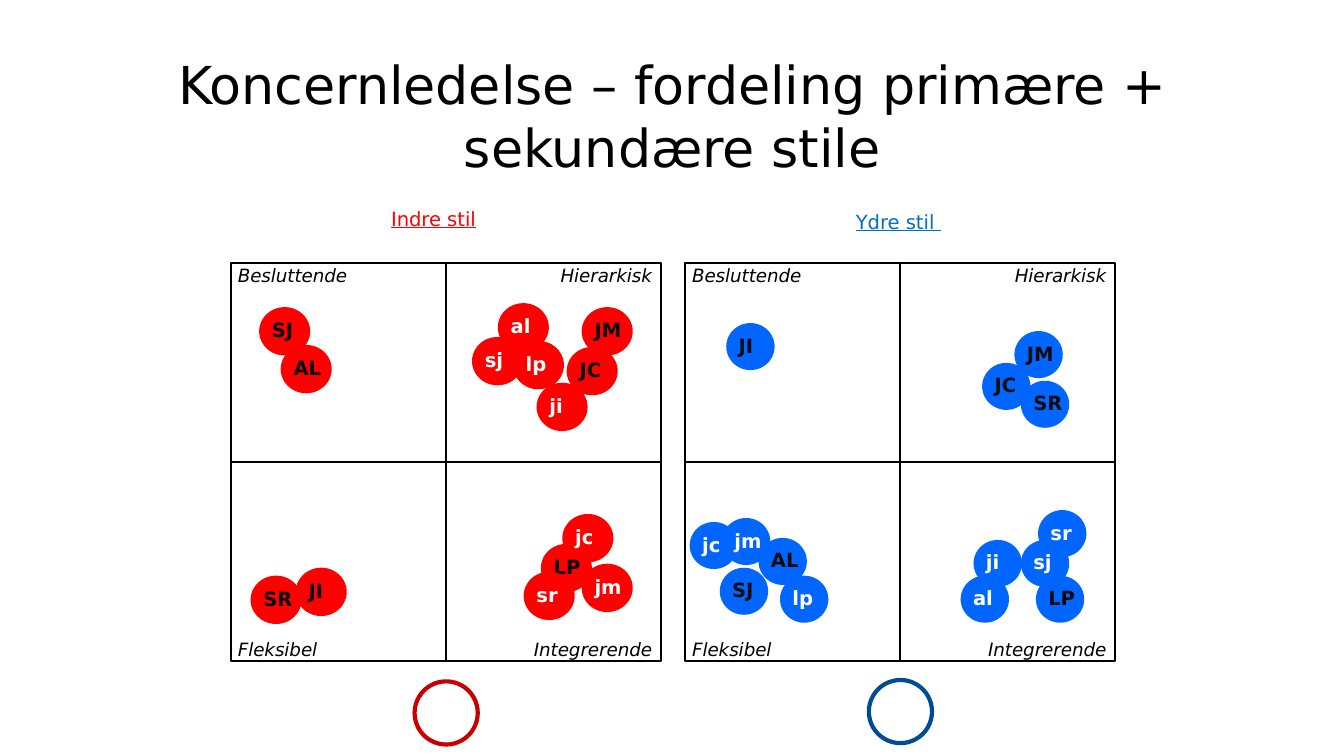
"""Build a slide that places leaders' initials in two style quadrants."""
from dataclasses import dataclass
from itertools import product

from pptx import Presentation
from pptx.dml.color import RGBColor
from pptx.enum.shapes import MSO_SHAPE as Shape
from pptx.enum.text import MSO_ANCHOR as Anchor, MSO_AUTO_SIZE as AutoSize, PP_ALIGN as Align
from pptx.util import Inches, Pt

FONT = "DejaVu Sans"
COLORS = {
    "black": "000000", "white": "FFFFFF", "ink": "080B0E",
    "red": "FF0000", "dark_red": "C80000",
    "blue": "0066FF", "heading_blue": "0070C0", "dark_blue": "004B96",
}
CELL_WIDTH, CELL_HEIGHT, GRID_TOP = 1.6, 1.48, 1.96
LABEL_WIDTH, LABEL_HEIGHT, LABEL_OVERHANG = 1.44, 0.24, 0.03
RING_SIZE = 0.47
LABELS = (("Besluttende", "Hierarkisk"), ("Fleksibel", "Integrerende"))


@dataclass(frozen=True)
class Area:
    left: float
    top: float
    width: float
    height: float

    def lengths(self) -> tuple:
        return tuple(Inches(v) for v in (self.left, self.top, self.width, self.height))


@dataclass(frozen=True)
class Dot:
    initials: str
    column: float
    row: float


@dataclass(frozen=True)
class Panel:
    heading: str
    heading_area: Area
    heading_margins: tuple
    heading_spacing: float
    heading_wrap: bool
    heading_color: str
    left: float
    dot_color: str
    dot_width: float
    dot_height: float
    ring_color: str
    ring_top: float
    dots: tuple


PANELS = (
    Panel("Ydre stil ", Area(6.27, 1.51, 0.86, 0.28), (0.1, 0.05, 0.1, 0.05), 1, False,
          "heading_blue", 5.1, "blue", 0.36, 0.35, "dark_blue", 5.06, (
              Dot("LP", 1.63, 1.57), Dot("SJ", 0.16, 1.53), Dot("AL", 0.34, 1.38),
              Dot("JC", 1.38, 0.5), Dot("JI", 0.19, 0.3), Dot("JM", 1.53, 0.34),
              Dot("SR", 1.56, 0.59), Dot("al", 1.28, 1.57), Dot("sj", 1.56, 1.39),
              Dot("sr", 1.64, 1.24), Dot("jc", 0.02, 1.3), Dot("lp", 0.44, 1.57),
              Dot("jm", 0.17, 1.28), Dot("ji", 1.34, 1.39))),
    Panel("Indre stil", Area(2.84, 1.52, 1.16, 0.25), (0.07, 0.04, 0.07, 0.04), 0.9, True,
          "red", 1.72, "red", 0.38, 0.36, "dark_red", 5.07, (
              Dot("SR", 0.09, 1.57), Dot("JC", 1.56, 0.42), Dot("LP", 1.44, 1.41),
              Dot("SJ", 0.13, 0.22), Dot("AL", 0.23, 0.41), Dot("JI", 0.3, 1.53),
              Dot("JM", 1.63, 0.22), Dot("sj", 1.12, 0.37), Dot("jm", 1.63, 1.51),
              Dot("lp", 1.31, 0.39), Dot("jc", 1.54, 1.26), Dot("ji", 1.42, 0.6),
              Dot("al", 1.24, 0.2), Dot("sr", 1.36, 1.55))),
)


def rgb(name: str) -> RGBColor:
    return RGBColor.from_string(COLORS[name])


def set_margins(frame, left: float, top: float, right: float, bottom: float) -> None:
    frame.margin_left, frame.margin_top = Inches(left), Inches(top)
    frame.margin_right, frame.margin_bottom = Inches(right), Inches(bottom)


def write(frame, text: str, size: float, color: str, align=Align.LEFT,
          bold: bool = False, italic: bool = False, underline: bool = False):
    para = frame.paragraphs[0]
    para.alignment = align
    span = para.add_run()
    span.text = text
    font = span.font
    font.name, font.size, font.color.rgb = FONT, Pt(size), rgb(color)
    font.bold, font.italic, font.underline = bold, italic, underline
    return para


def add_figure(shapes, kind, area: Area, fill: str = "", line: str = "", weight: float = 1):
    figure = shapes.add_shape(kind, *area.lengths())
    figure.shadow.inherit = False
    if fill:
        figure.fill.solid()
        figure.fill.fore_color.rgb = rgb(fill)
    else:
        figure.fill.background()
    if line:
        figure.line.color.rgb = rgb(line)
        figure.line.width = Pt(weight)
    else:
        figure.line.fill.background()
    return figure


def draw_title(page, text: str) -> None:
    title = page.shapes.title
    title.left, title.top, title.width, title.height = Area(0.43, 0.39, 9.14, 0.74).lengths()
    frame = title.text_frame
    frame.word_wrap, frame.auto_size = True, AutoSize.NONE
    frame.vertical_anchor = Anchor.TOP
    set_margins(frame, 0, 0, 0, 0)
    write(frame, text, 28, "black", Align.CENTER)


def draw_heading(page, panel: Panel) -> None:
    frame = page.shapes.add_textbox(*panel.heading_area.lengths()).text_frame
    frame.word_wrap = panel.heading_wrap
    set_margins(frame, *panel.heading_margins)
    para = write(frame, panel.heading, 10.5, panel.heading_color, underline=True)
    para.line_spacing = panel.heading_spacing


def draw_grid(page, panel: Panel) -> None:
    shapes = page.shapes.add_group_shape().shapes
    for row, column in product(range(2), repeat=2):
        add_figure(shapes, Shape.RECTANGLE,
                   Area(panel.left + column * CELL_WIDTH, GRID_TOP + row * CELL_HEIGHT,
                        CELL_WIDTH, CELL_HEIGHT), line="black")
    across = 2 * CELL_WIDTH + 0.04 - LABEL_WIDTH
    down = 2 * CELL_HEIGHT + 0.06 - LABEL_HEIGHT
    for column, row in product(range(2), repeat=2):
        area = Area(panel.left - LABEL_OVERHANG + column * across,
                    GRID_TOP - LABEL_OVERHANG + row * down, LABEL_WIDTH, LABEL_HEIGHT)
        frame = shapes.add_textbox(*area.lengths()).text_frame
        frame.word_wrap = True
        set_margins(frame, 0.08, 0.04, 0.08, 0.04)
        write(frame, LABELS[row][column], 9.75, "black",
              Align.RIGHT if column else Align.LEFT, italic=True)


def draw_dot(page, panel: Panel, dot: Dot) -> None:
    area = Area(panel.left + dot.column * CELL_WIDTH, GRID_TOP + dot.row * CELL_HEIGHT,
                panel.dot_width, panel.dot_height)
    frame = add_figure(page.shapes, Shape.OVAL, area, fill=panel.dot_color).text_frame
    frame.word_wrap, frame.vertical_anchor = False, Anchor.MIDDLE
    set_margins(frame, 0.04, 0.03, 0.1, 0.05)
    write(frame, dot.initials, 10.5, "ink" if dot.initials.isupper() else "white", bold=True)


def draw_ring(page, panel: Panel) -> None:
    area = Area(panel.left + CELL_WIDTH - RING_SIZE / 2, panel.ring_top, RING_SIZE, RING_SIZE)
    add_figure(page.shapes, Shape.OVAL, area, "white", panel.ring_color, 2.25)


def main() -> None:
    deck = Presentation()
    deck.slide_width = Inches(10)
    deck.slide_height = deck.slide_width * 9 // 16
    page = deck.slides.add_slide(deck.slide_layouts[5])
    draw_title(page, "Koncernledelse – fordeling primære + sekundære stile")
    for panel in PANELS:
        draw_heading(page, panel)
        draw_grid(page, panel)
        for dot in panel.dots:
            draw_dot(page, panel, dot)
        draw_ring(page, panel)
    deck.save("out.pptx")


if __name__ == "__main__":
    main()
